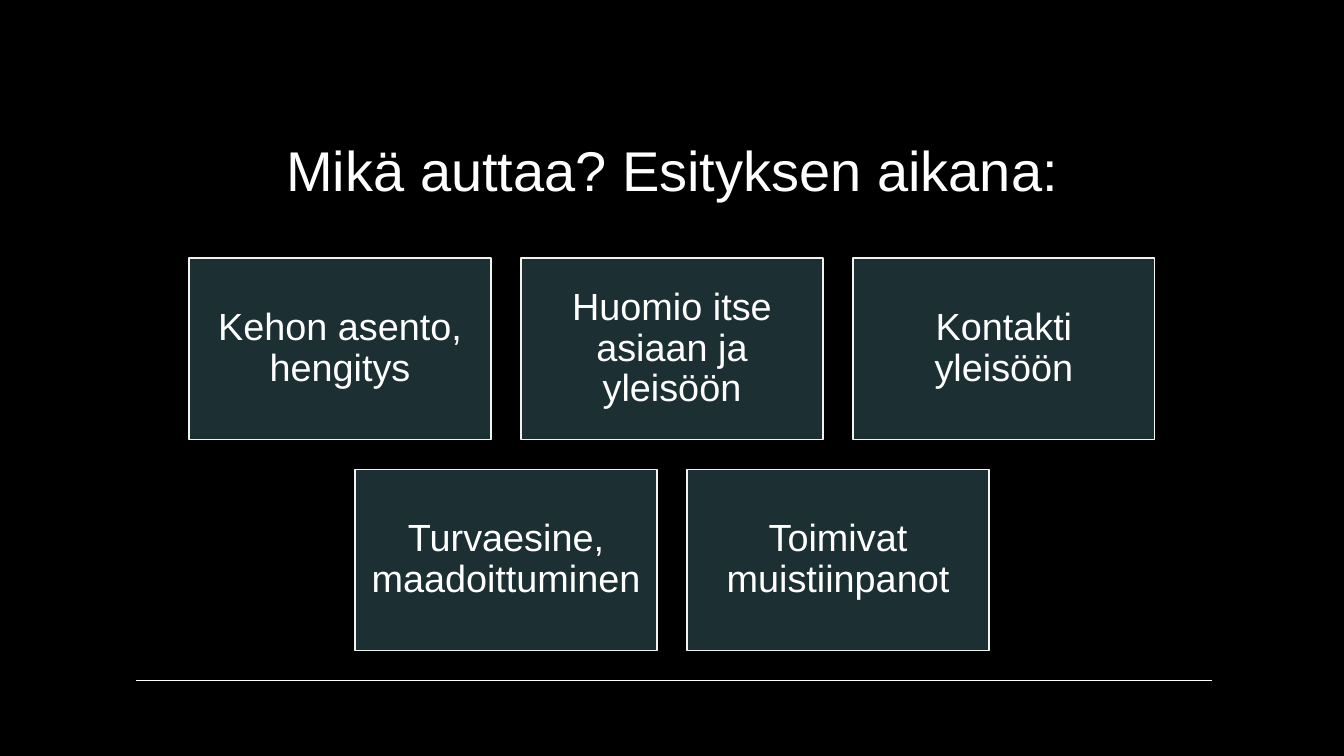
import pptx
import pptx.dml.color
import pptx.enum.shapes
import pptx.enum.text
import pptx.oxml
import pptx.util

Pt = pptx.util.Pt
ALIGN = pptx.enum.text.PP_ALIGN
ANCHOR = pptx.enum.text.MSO_ANCHOR
COLORS = {"black": "000000", "teal": "1C2F32", "edge": "F1F3F0", "white": "FFFFFF"}
PAGE_WIDTH, PAGE_HEIGHT = 960, 540
CARD_WIDTH, CARD_HEIGHT, CARD_GAP = 215.6, 129.4, 21.5
CARDS_TOP = 184.4
CARD_ROWS = [
    ["Kehon asento, hengitys", "Huomio itse asiaan ja yleisöön", "Kontakti yleisöön"],
    ["Turvaesine, maadoittuminen", "Toimivat muistiinpanot"],
]


def apply(target, values):
    for name, value in values.items():
        setattr(target, name, value)


def color(name):
    return pptx.dml.color.RGBColor.from_string(COLORS[name])


class SlideBuilder:
    def __init__(self, page, font_name):
        self.page = page
        self.font_name = font_name

    def background(self, fill):
        self.page.background.fill.solid()
        self.page.background.fill.fore_color.rgb = color(fill)

    def set_text(self, box, text, size, anchor, inset, spacing):
        frame = box.text_frame
        margins = {f"margin_{side}": Pt(inset) for side in ("left", "top", "right", "bottom")}
        apply(frame, {"word_wrap": True, "vertical_anchor": anchor,
                      "auto_size": pptx.enum.text.MSO_AUTO_SIZE.NONE, **margins})
        para = frame.paragraphs[0]
        apply(para, {"alignment": ALIGN.CENTER, "line_spacing": spacing})
        span = para.add_run()
        span.text = text
        apply(span.font, {"name": self.font_name, "size": Pt(size)})
        span.font.color.rgb = color("white")

    def title(self, text, left, top, width, height):
        box = self.page.shapes.title
        apply(box, {"left": Pt(left), "top": Pt(top), "width": Pt(width), "height": Pt(height)})
        self.set_text(box, text, 40, ANCHOR.BOTTOM, 5, 0.9)

    def card(self, text, left, top):
        box = self.page.shapes.add_shape(
            pptx.enum.shapes.MSO_SHAPE.RECTANGLE,
            Pt(left), Pt(top), Pt(CARD_WIDTH), Pt(CARD_HEIGHT))
        box.shadow.inherit = False
        box.fill.solid()
        box.fill.fore_color.rgb = color("teal")
        box.line.color.rgb = color("edge")
        box.line.width = Pt(1)
        self.set_text(box, text, 27, ANCHOR.MIDDLE, 8, 0.9)

    def rule(self, left, right, top):
        line = self.page.shapes.add_connector(
            pptx.enum.shapes.MSO_CONNECTOR.STRAIGHT, Pt(left), Pt(top), Pt(right), Pt(top))
        line.line.color.rgb = color("white")
        line.line.width = Pt(1)
        properties = line._element.spPr
        properties.append(pptx.oxml.parse_xml(
            '<a:effectLst xmlns:a="http://schemas.openxmlformats.org/drawingml/2006/main"/>'))


def main():
    deck = pptx.Presentation()
    apply(deck, {"slide_width": Pt(PAGE_WIDTH), "slide_height": Pt(PAGE_HEIGHT)})
    builder = SlideBuilder(deck.slides.add_slide(deck.slide_layouts[5]), "Arial")
    builder.background("black")
    builder.title("Mikä auttaa? Esityksen aikana:", 138, 71.3, 684, 79.2)
    builder.rule(97.2, 865.6, 486)
    for row, texts in enumerate(CARD_ROWS):
        row_width = len(texts) * (CARD_WIDTH + CARD_GAP) - CARD_GAP
        row_left = (PAGE_WIDTH - row_width) / 2
        top = CARDS_TOP + row * (CARD_HEIGHT + CARD_GAP)
        for column, text in enumerate(texts):
            builder.card(text, row_left + column * (CARD_WIDTH + CARD_GAP), top)
    deck.save("out.pptx")


if __name__ == "__main__":
    main()
